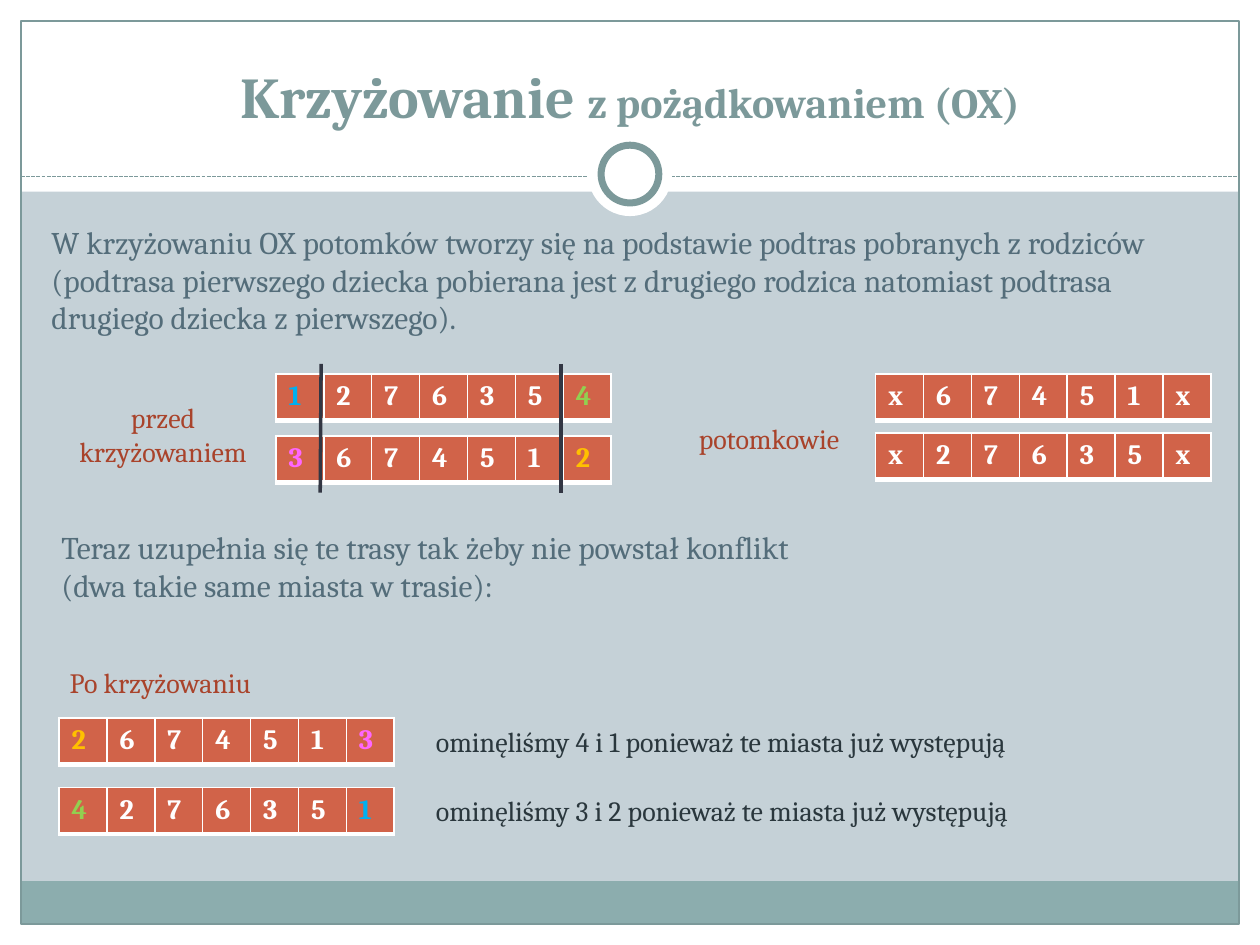
import pptx
import pptx.dml.color
import pptx.enum.dml
import pptx.enum.shapes
import pptx.enum.text
import pptx.oxml
import pptx.oxml.ns
import pptx.util

Pt = pptx.util.Pt
SHAPE = pptx.enum.shapes.MSO_SHAPE
ALIGN = pptx.enum.text.PP_ALIGN
ANCHOR = pptx.enum.text.MSO_ANCHOR
WHITE, TEAL, SLATE, RUST, INK = "FFFFFF", "7C999A", "546D7A", "A9432B", "2A373D"
BLUE, GREEN, PINK, GOLD = "00B0F0", "92D050", "FF66FF", "FFC000"


def color(value):
    return pptx.dml.color.RGBColor.from_string(value)


def add_span(para, text, size, tint, bold=False):
    span = para.add_run()
    span.text = text
    span.font.name = "Cambria"
    span.font.size = Pt(size)
    span.font.bold = bold
    span.font.color.rgb = color(tint)


deck = pptx.Presentation()
deck.slide_width, deck.slide_height = Pt(720), Pt(540)
page = deck.slides.add_slide(deck.slide_layouts[6])
page.background.fill.solid()
page.background.fill.fore_color.rgb = color("C5D1D7")

# White margins, footer band and frame: kind, left, top, width, height, fill, line width
panels = [
    (SHAPE.RECTANGLE, 0, 528, 720, 12, WHITE, 0),
    (SHAPE.RECTANGLE, 0, 0, 720, 109.5, WHITE, 0),
    (SHAPE.RECTANGLE, 0, 0, 12, 540, WHITE, 0),
    (SHAPE.RECTANGLE, 708, 0, 12, 540, WHITE, 0),
    (SHAPE.RECTANGLE, 12, 503.5, 696, 24.5, "8CADAE", 0),
    (SHAPE.RECTANGLE, 12, 12, 696, 516, None, 0.75),
]
# Ring over the dashed divider
ring = [
    (SHAPE.OVAL, 336, 75.5, 48, 48, WHITE, 0),
    (SHAPE.OVAL, 343.5, 83, 33, 33, WHITE, 4),
]
# Dashed divider and the two cutting lines: x1, y1, x2, y2, colour, width, dash
divider = (12, 100.8, 708, 100.8, TEAL, 0.75, pptx.enum.dml.MSO_LINE.SQUARE_DOT)
cuts = [
    (183.5, 208, 183, 281.5, "323643", 2, None),
    (320.5, 208, 320.5, 281.5, "323643", 2, None),
]

# Routes: left, top, cities, colours of the end cities
routes = [
    (157.7, 213.8, "1276354", BLUE, GREEN),
    (157.7, 249.1, "3674512", PINK, GOLD),
    (500.4, 213.8, "x67451x", WHITE, WHITE),
    (500.4, 247.5, "x27635x", WHITE, WHITE),
    (33.8, 410.4, "2674513", GOLD, PINK),
    (33.8, 450, "4276351", GREEN, BLUE),
]
border = (
    '<a:{side} xmlns:a="http://schemas.openxmlformats.org/drawingml/2006/main" w="{width}">'
    '<a:solidFill><a:srgbClr val="FFFFFF"/></a:solidFill></a:{side}>'
)

# Draw everything from back to front
for kind, left, top, width, height, fill, line in panels + ring:
    if kind == SHAPE.OVAL and not line:
        cut_list = [divider]
    else:
        cut_list = []
    for x1, y1, x2, y2, tint, weight, dash in cut_list:
        rule = page.shapes.add_connector(
            pptx.enum.shapes.MSO_CONNECTOR.STRAIGHT, Pt(x1), Pt(y1), Pt(x2), Pt(y2))
        rule.line.color.rgb = color(tint)
        rule.line.width = Pt(weight)
        rule.line.dash_style = dash
        rule._element.spPr.append(pptx.oxml.parse_xml(
            '<a:effectLst xmlns:a="http://schemas.openxmlformats.org/drawingml/2006/main"/>'))
    panel = page.shapes.add_shape(kind, Pt(left), Pt(top), Pt(width), Pt(height))
    panel.shadow.inherit = False
    if fill:
        panel.fill.solid()
        panel.fill.fore_color.rgb = color(fill)
    else:
        panel.fill.background()
    if line:
        panel.line.color.rgb = color(TEAL)
        panel.line.width = Pt(line)
    else:
        panel.line.fill.background()

# Route tables
for left, top, cities, first, last in routes:
    frame = page.shapes.add_table(
        1, len(cities), Pt(left), Pt(top), Pt(27.36 * len(cities)), Pt(26.5))
    table = frame.table
    table.first_row = table.horz_banding = False
    tints = [first] + [WHITE] * (len(cities) - 2) + [last]
    for column, (city, tint) in enumerate(zip(cities, tints)):
        table.columns[column].width = Pt(27.36)
        cell = table.cell(0, column)
        for side, weight in (("lnL", 1), ("lnR", 1), ("lnT", 1), ("lnB", 3)):
            cell._tc.get_or_add_tcPr().append(
                pptx.oxml.parse_xml(border.format(side=side, width=Pt(weight))))
        cell.fill.solid()
        cell.fill.fore_color.rgb = color("D16349")
        add_span(cell.text_frame.paragraphs[0], city, 16, tint, True)

# Cutting lines over the parents
for x1, y1, x2, y2, tint, weight, dash in cuts:
    rule = page.shapes.add_connector(
        pptx.enum.shapes.MSO_CONNECTOR.STRAIGHT, Pt(x1), Pt(y1), Pt(x2), Pt(y2))
    rule.line.color.rgb = color(tint)
    rule.line.width = Pt(weight)
    rule._element.spPr.append(pptx.oxml.parse_xml(
        '<a:effectLst xmlns:a="http://schemas.openxmlformats.org/drawingml/2006/main"/>'))

# Texts: left, top, width, height, alignment, wrap, paragraphs of (text, size, colour, bold)
texts = [
    (24, 18, 672, 60, ALIGN.CENTER, True, [
        [("Krzyżowanie ", 33, TEAL, True), ("z pożądkowaniem (OX)", 24, TEAL, True)]]),
    (22.3, 123.8, 664, 72.7, ALIGN.LEFT, True, [
        [("W krzyżowaniu OX potomków tworzy się na podstawie podtras pobranych z rodziców "
          "(podtrasa pierwszego dziecka pobierana jest z drugiego rodzica natomiast podtrasa "
          "drugiego dziecka z pierwszego).", 18, SLATE)]]),
    (34.5, 225.4, 117.4, 46, ALIGN.CENTER, False, [
        [("przed", 16, RUST)], [("krzyżowaniem", 16, RUST)]]),
    (388, 237.6, 103, 26.6, ALIGN.CENTER, False, [[("potomkowie", 16, RUST)]]),
    (28, 298, 658, 51, ALIGN.LEFT, True, [
        [("Teraz uzupełnia się te trasy tak żeby nie powstał konflikt", 18, SLATE)],
        [("(dwa takie same miasta w trasie):", 18, SLATE)]]),
    (28, 376.6, 127.4, 26.6, ALIGN.CENTER, False, [[("Po krzyżowaniu", 16, RUST)]]),
    (242, 410.4, 433.4, 26.6, ALIGN.LEFT, True, [
        [("ominęliśmy 4 i 1 ponieważ te miasta już występują", 16, INK)]]),
    (242, 450, 433.4, 26.6, ALIGN.LEFT, True, [
        [("ominęliśmy 3 i 2 ponieważ te miasta już występują", 16, INK)]]),
]
for left, top, width, height, align, wrap, paragraphs in texts:
    box = page.shapes.add_textbox(Pt(left), Pt(top), Pt(width), Pt(height))
    box.text_frame.word_wrap = wrap
    is_title = top == 18
    box.text_frame.vertical_anchor = ANCHOR.BOTTOM if is_title else ANCHOR.TOP
    for number, spans in enumerate(paragraphs):
        para = box.text_frame.add_paragraph() if number else box.text_frame.paragraphs[0]
        para.alignment = align
        for span in spans:
            add_span(para, *span)

deck.save("out.pptx")
